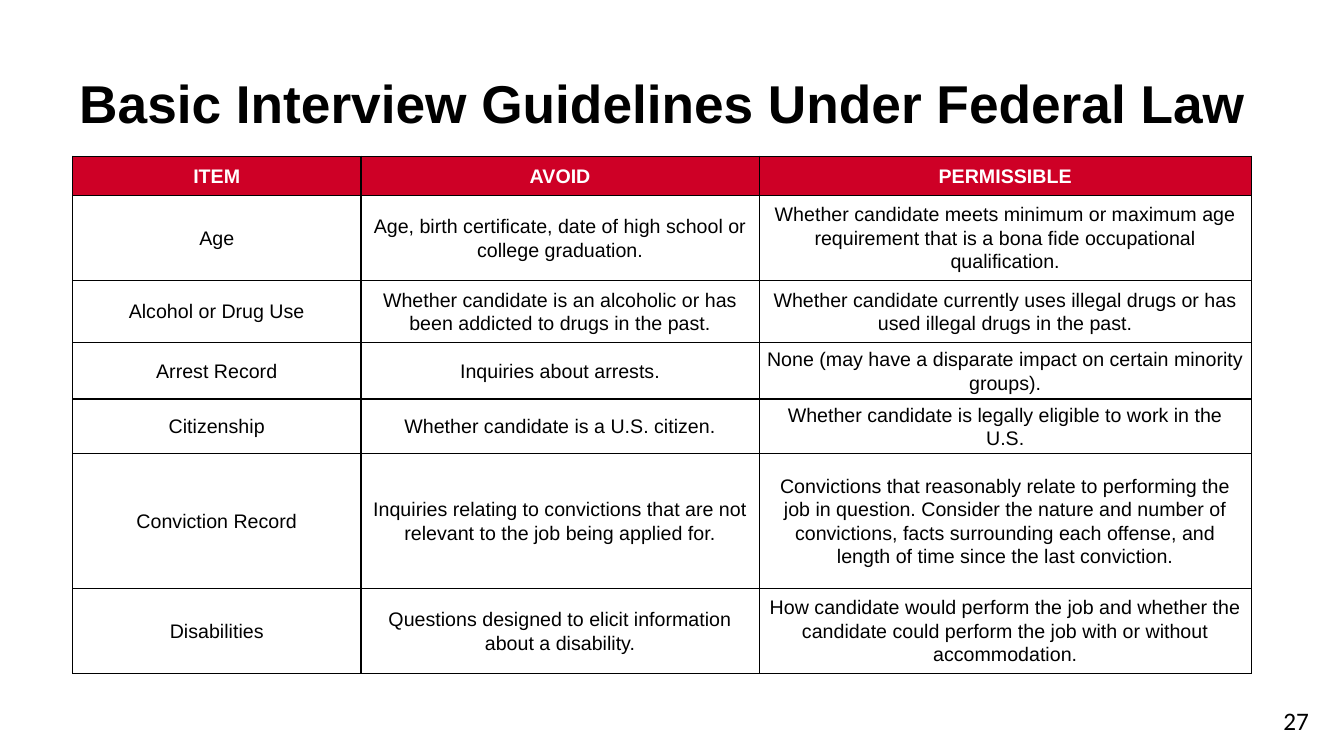
import pptx
import pptx.dml.color
import pptx.enum.text
import pptx.oxml
import pptx.oxml.ns
import pptx.util

Inches = pptx.util.Inches
Pt = pptx.util.Pt
RGBColor = pptx.dml.color.RGBColor
PP_ALIGN = pptx.enum.text.PP_ALIGN
MSO_ANCHOR = pptx.enum.text.MSO_ANCHOR

TITLE = "Basic Interview Guidelines Under Federal Law"
PAGE_NUMBER = "27"
ROWS = [
    ("ITEM", "AVOID", "PERMISSIBLE"),
    ("Age",
     "Age, birth certificate, date of high school or college graduation.",
     "Whether candidate meets minimum or maximum age requirement that is a "
     "bona fide occupational qualification."),
    ("Alcohol or Drug Use",
     "Whether candidate is an alcoholic or has been addicted to drugs in the past.",
     "Whether candidate currently uses illegal drugs or has used illegal drugs "
     "in the past."),
    ("Arrest Record",
     "Inquiries about arrests.",
     "None (may have a disparate impact on certain minority groups)."),
    ("Citizenship",
     "Whether candidate is a U.S. citizen.",
     "Whether candidate is legally eligible to work in the U.S."),
    ("Conviction Record",
     "Inquiries relating to convictions that are not relevant to the job being "
     "applied for.",
     "Convictions that reasonably relate to performing the job in question. "
     "Consider the nature and number of convictions, facts surrounding each "
     "offense, and length of time since the last conviction."),
    ("Disabilities",
     "Questions designed to elicit information about a disability.",
     "How candidate would perform the job and whether the candidate could "
     "perform the job with or without accommodation."),
]
COL_WIDTHS = [2.86, 3.95, 4.88]
ROW_HEIGHTS = [0.39, 0.84, 0.62, 0.56, 0.54, 1.34, 0.84]

BLACK = RGBColor(0, 0, 0)
WHITE = RGBColor(255, 255, 255)
RED = RGBColor(0xCE, 0x00, 0x26)


def format_text(p, font, size, color, bold=False, align=PP_ALIGN.LEFT):
    p.alignment = align
    for r in p.runs:
        r.font.name = font
        r.font.size = Pt(size)
        r.font.bold = bold
        r.font.color.rgb = color


def add_text(slide, text, box, *style):
    tf = slide.shapes.add_textbox(*map(Inches, box)).text_frame
    tf.word_wrap = True
    tf.text = text
    format_text(tf.paragraphs[0], *style)


def add_borders(cell):
    tcPr = cell._tc.get_or_add_tcPr()
    for i, side in enumerate(("lnL", "lnR", "lnT", "lnB")):
        tcPr.insert(i, pptx.oxml.parse_xml(
            f'<a:{side} {pptx.oxml.ns.nsdecls("a")} w="{Pt(1)}">'
            f'<a:solidFill><a:srgbClr val="{BLACK}"/></a:solidFill></a:{side}>'))


def fill_cell(cell, text, header):
    cell.text = text
    cell.vertical_anchor = MSO_ANCHOR.MIDDLE
    cell.margin_left = cell.margin_right = Inches(0.07)
    cell.margin_top = cell.margin_bottom = 0
    p = cell.text_frame.paragraphs[0]
    p.line_spacing = 1.07
    format_text(p, "Arial", 14, WHITE if header else BLACK, header, PP_ALIGN.CENTER)
    if header:
        cell.fill.solid()
        cell.fill.fore_color.rgb = RED
    else:
        cell.fill.background()
    add_borders(cell)


def add_guidelines(slide):
    box = (0.72, 1.55, sum(COL_WIDTHS), sum(ROW_HEIGHTS))
    table = slide.shapes.add_table(
        len(ROWS), len(COL_WIDTHS), *map(Inches, box)).table
    table.horz_banding = False
    for column, width in zip(table.columns, COL_WIDTHS):
        column.width = Inches(width)
    for i, (row, height) in enumerate(zip(table.rows, ROW_HEIGHTS)):
        row.height = Inches(height)
        for cell, text in zip(row.cells, ROWS[i]):
            fill_cell(cell, text, i == 0)


def main():
    prs = pptx.Presentation()
    prs.slide_width = Inches(13.33)
    prs.slide_height = Inches(7.5)
    slide = prs.slides.add_slide(prs.slide_layouts[6])
    add_text(slide, TITLE, (0.21, 0.65, 12.72, 0.76),
             "Arial", 38, BLACK, True, PP_ALIGN.CENTER)
    add_guidelines(slide)
    add_text(slide, PAGE_NUMBER, (12.63, 6.95, 0.61, 0.4), "Calibri", 18, BLACK)
    prs.save("out.pptx")


if __name__ == "__main__":
    main()
